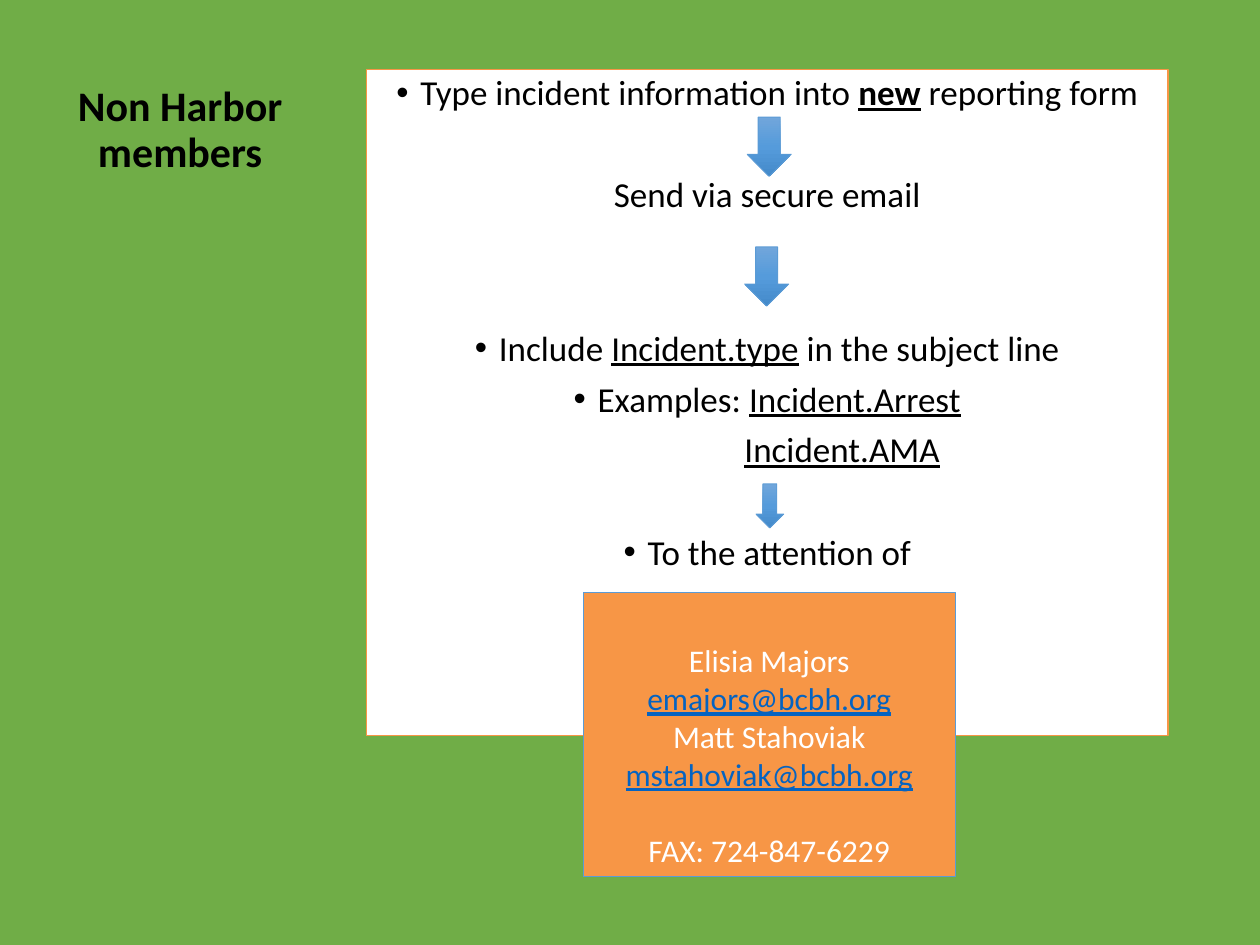
"""Build the slide on reporting incidents for members of other plans."""
import copy
from dataclasses import dataclass

import pptx
import pptx.dml.color
import pptx.enum.shapes
import pptx.enum.text
import pptx.oxml
import pptx.oxml.ns
import pptx.util
from pptx.util import Inches

RGBColor = pptx.dml.color.RGBColor
Anchor = pptx.enum.text.MSO_ANCHOR
Preset = pptx.enum.shapes.MSO_SHAPE

GREEN = RGBColor(0x70, 0xAD, 0x47)
ORANGE = RGBColor(0xF7, 0x96, 0x46)
BLUE = RGBColor(0x5B, 0x9B, 0xD5)
LINK_BLUE = RGBColor(0x05, 0x63, 0xC1)
WHITE = RGBColor(0xFF, 0xFF, 0xFF)
BLACK = RGBColor(0, 0, 0)
ARROW_STOPS = (
    (0, RGBColor(0x71, 0xA6, 0xDB)),
    (0.5, RGBColor(0x55, 0x9B, 0xDB)),
    (1, RGBColor(0x44, 0x8A, 0xCA)),
)


@dataclass(frozen=True)
class Area:
    left: float
    top: float
    width: float
    height: float


@dataclass(frozen=True)
class Span:
    text: str
    color: RGBColor = BLACK
    underline: bool = False
    bold: bool = False


@dataclass(frozen=True)
class Line:
    spans: tuple[Span, ...]
    space_before: float = 0
    bullet: bool = False
    indent: float = 0


STEPS = (
    Line((Span("Type incident information into "), Span("new", underline=True, bold=True),
          Span(" reporting form")), bullet=True),
    Line((Span("Send via secure email"),), 36.7),
    Line((Span("Include "), Span("Incident.type", underline=True),
          Span(" in the subject line")), 66, bullet=True),
    Line((Span("Examples: "), Span("Incident.Arrest", underline=True)), 7.5, bullet=True),
    Line((Span("Incident.AMA", underline=True),), 7.5, indent=1.19),
    Line((Span("To the attention of"),), 36.7, bullet=True),
)
CONTACTS = (
    Line((Span("Elisia Majors", WHITE),)),
    Line((Span("emajors@bcbh.org", LINK_BLUE, True),)),
    Line((Span("Matt Stahoviak", WHITE),)),
    Line((Span("mstahoviak@bcbh.org", LINK_BLUE, True),)),
    Line((Span("FAX: 724-847-6229", WHITE),), 22),
)
ARROWS = (
    Area(5.93, 0.93, 0.35, 0.47),
    Area(5.91, 1.96, 0.35, 0.47),
    Area(6, 3.84, 0.22, 0.35),
)


def add_outlined_shape(slide: pptx.slide.Slide, preset: Preset, area: Area,
                       line_color: RGBColor, line_width: float) -> pptx.shapes.autoshape.Shape:
    """Add a preset shape with an outline and no shadow."""
    shape = slide.shapes.add_shape(preset, Inches(area.left), Inches(area.top),
                                   Inches(area.width), Inches(area.height))
    shape.shadow.inherit = False
    shape.line.color.rgb = line_color
    shape.line.width = pptx.util.Pt(line_width)
    return shape


def add_bullet(paragraph: pptx.text.text._Paragraph) -> None:
    """Give a paragraph a hanging round bullet."""
    properties = paragraph._p.get_or_add_pPr()
    properties.set("marL", str(Inches(0.19)))
    properties.set("indent", str(-Inches(0.19)))
    namespace = pptx.oxml.ns.nsdecls("a")
    properties.append(pptx.oxml.parse_xml(f'<a:buFont {namespace} typeface="Arial"/>'))
    properties.append(pptx.oxml.parse_xml(f'<a:buChar {namespace} char="•"/>'))


def add_panel(slide: pptx.slide.Slide, area: Area, fill: RGBColor, line_color: RGBColor,
              line_width: float, lines: tuple[Line, ...], size: int,
              line_spacing: float, margin_top: float) -> None:
    """Add a filled rectangle holding centred lines of text."""
    panel = add_outlined_shape(slide, Preset.RECTANGLE, area, line_color, line_width)
    panel.fill.solid()
    panel.fill.fore_color.rgb = fill
    text_frame = panel.text_frame
    text_frame.word_wrap = True
    text_frame.vertical_anchor = Anchor.TOP
    text_frame.margin_top = Inches(margin_top)
    for index, line in enumerate(lines):
        paragraph = text_frame.add_paragraph() if index else text_frame.paragraphs[0]
        if line.bullet:
            add_bullet(paragraph)
        elif line.indent:
            paragraph._p.get_or_add_pPr().set("marL", str(Inches(line.indent)))
        paragraph.alignment = pptx.enum.text.PP_ALIGN.CENTER
        paragraph.line_spacing = line_spacing
        paragraph.space_before = pptx.util.Pt(line.space_before)
        for span in line.spans:
            run = paragraph.add_run()
            run.text = span.text
            run.font.name = "Calibri"
            run.font.size = pptx.util.Pt(size)
            run.font.color.rgb = span.color
            run.font.bold = span.bold
            run.font.underline = span.underline


def add_down_arrow(slide: pptx.slide.Slide, area: Area) -> None:
    """Add a down arrow shaded from top to bottom."""
    arrow = add_outlined_shape(slide, Preset.DOWN_ARROW, area, BLUE, 0.5)
    arrow.fill.gradient()
    arrow.fill.gradient_angle = 270
    stop_list = arrow._element.spPr.find(".//" + pptx.oxml.ns.qn("a:gsLst"))
    stop_list.insert(1, copy.deepcopy(stop_list[0]))
    for stop, (position, color) in zip(arrow.fill.gradient_stops, ARROW_STOPS):
        stop.position = position
        stop.color.rgb = color


def set_title(slide: pptx.slide.Slide, text: str, area: Area) -> None:
    """Place and format the title placeholder."""
    title = slide.shapes.title
    title.left, title.top = Inches(area.left), Inches(area.top)
    title.width, title.height = Inches(area.width), Inches(area.height)
    text_frame = title.text_frame
    text_frame.text = text
    text_frame.word_wrap = True
    text_frame.auto_size = pptx.enum.text.MSO_AUTO_SIZE.NONE
    text_frame.vertical_anchor = Anchor.BOTTOM
    paragraph = text_frame.paragraphs[0]
    paragraph.alignment = pptx.enum.text.PP_ALIGN.CENTER
    paragraph.line_spacing = 0.9
    font = paragraph.runs[0].font
    font.name = "Calibri"
    font.size = pptx.util.Pt(24)
    font.bold = True
    font.color.rgb = BLACK


def main() -> None:
    """Build and save the presentation."""
    presentation = pptx.Presentation()
    presentation.slide_width = Inches(10)
    presentation.slide_height = Inches(7.5)
    slide = presentation.slides.add_slide(presentation.slide_layouts[5])
    slide.background.fill.solid()
    slide.background.fill.fore_color.rgb = GREEN
    set_title(slide, "Non Harbor members", Area(0, 0.41, 2.86, 1.04))
    add_panel(slide, Area(2.91, 0.55, 6.36, 5.29), WHITE, ORANGE, 0.75, STEPS, 20, 0.9, 0.05)
    add_panel(slide, Area(4.63, 4.7, 2.95, 2.26), ORANGE, BLUE, 0.5, CONTACTS, 18, 1, 0.39)
    for area in ARROWS:
        add_down_arrow(slide, area)
    presentation.save("out.pptx")


if __name__ == "__main__":
    main()
